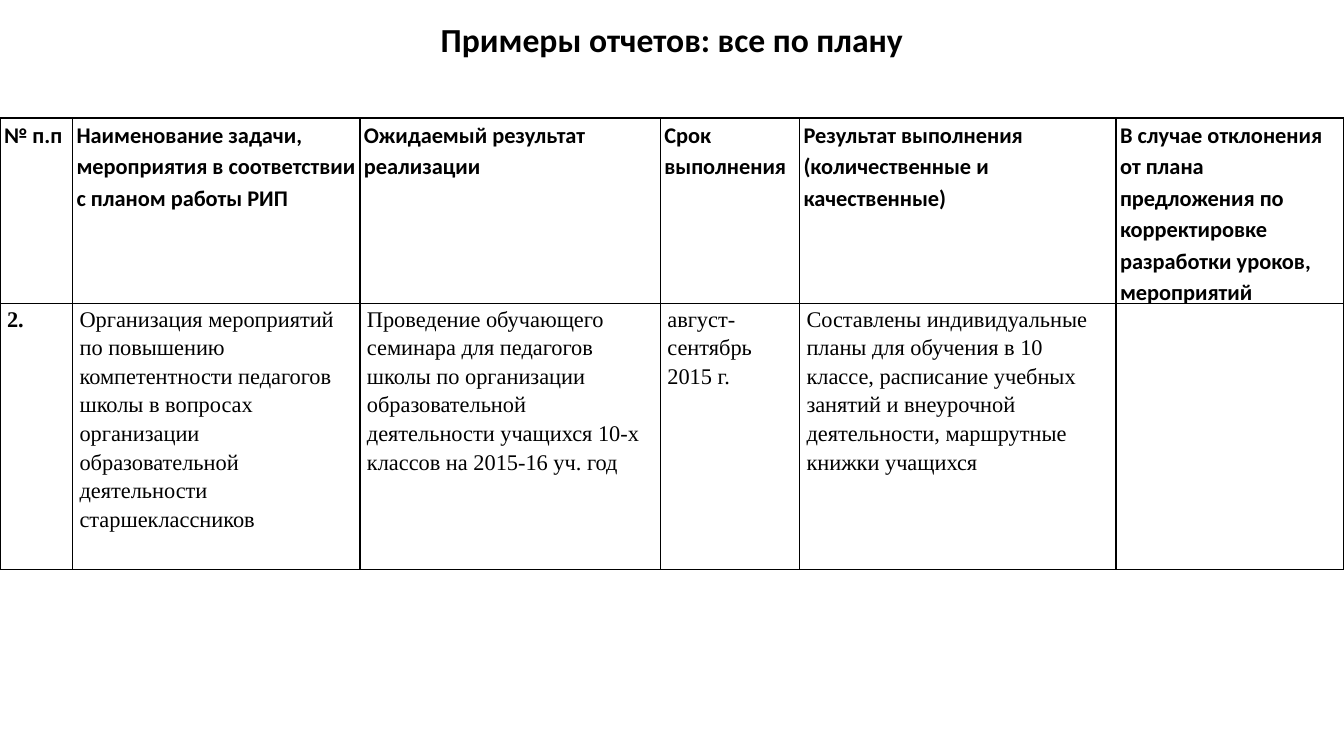
from lxml import etree
from pptx import Presentation
from pptx.dml.color import RGBColor
from pptx.enum.text import MSO_AUTO_SIZE, PP_ALIGN
from pptx.oxml.ns import qn
from pptx.util import Inches, Pt

CENTER = PP_ALIGN.CENTER
FIT_SHAPE = MSO_AUTO_SIZE.SHAPE_TO_FIT_TEXT

COLORS = {"ink": "000000"}
HEAD_FONT = "Calibri"
BODY_FONT = "Times New Roman"

COLUMN_WIDTHS = [0.72, 2.85, 2.98, 1.38, 3.14, 2.26]
ROW_HEIGHTS = [1.84, 2.64]
HEADINGS = [
    "№ п.п",
    "Наименование задачи, мероприятия в соответствии с планом работы РИП",
    "Ожидаемый результат реализации",
    "Срок выполнения",
    "Результат выполнения (количественные и качественные)",
    "В случае отклонения от плана предложения по корректировке "
    "разработки уроков, мероприятий",
]
TASK = [
    "2.",
    "Организация мероприятий по повышению компетентности педагогов школы "
    "в вопросах организации образовательной деятельности старшеклассников",
    "Проведение обучающего семинара для педагогов школы по организации "
    "образовательной деятельности учащихся 10-х классов на 2015-16 уч. год",
    "август-сентябрь 2015 г.",
    "Составлены индивидуальные планы для обучения в 10 классе, расписание "
    "учебных занятий и внеурочной деятельности, маршрутные книжки учащихся",
    "",
]


def set_text(para, text, font_name, size, bold):
    para.text = text
    para.font.name = font_name
    para.font.size = Pt(size)
    para.font.bold = bold
    para.font.color.rgb = RGBColor.from_string(COLORS["ink"])


def add_title(page, text):
    box = page.shapes.add_textbox(0, Inches(0.14), Inches(13.33), Inches(0.5))
    frame = box.text_frame
    frame.word_wrap = True
    frame.auto_size = FIT_SHAPE
    para = frame.paragraphs[0]
    para.alignment = CENTER
    set_text(para, text, HEAD_FONT, 24, True)


def add_borders(cell):
    properties = cell._tc.get_or_add_tcPr()
    # Border lines come before the fill in the cell properties
    for index, side in enumerate(("a:lnL", "a:lnR", "a:lnT", "a:lnB")):
        line = etree.Element(qn(side), w=str(Pt(1)))
        fill = etree.SubElement(line, qn("a:solidFill"))
        etree.SubElement(fill, qn("a:srgbClr"), val=COLORS["ink"])
        properties.insert(index, line)


def fill_cell(cell, text, font_name, bold, side_margin):
    cell.fill.background()
    cell.margin_left = cell.margin_right = Inches(side_margin)
    cell.margin_top = cell.margin_bottom = 0
    para = cell.text_frame.paragraphs[0]
    para.line_spacing = 1.15
    set_text(para, text, font_name, 16, bold)
    add_borders(cell)


def add_report_table(page):
    frame = page.shapes.add_table(
        len(ROW_HEIGHTS), len(COLUMN_WIDTHS), 0, Inches(1.17),
        Inches(sum(COLUMN_WIDTHS)), Inches(sum(ROW_HEIGHTS)))
    table = frame.table
    table.first_row = False
    table.horz_banding = False
    for column, width in zip(table.columns, COLUMN_WIDTHS):
        column.width = Inches(width)
    for row, height in zip(table.rows, ROW_HEIGHTS):
        row.height = Inches(height)
    for index, (heading, entry) in enumerate(zip(HEADINGS, TASK)):
        fill_cell(table.cell(0, index), heading, HEAD_FONT, True, 0.04)
        # Only the task number is bold in the body row
        fill_cell(table.cell(1, index), entry, BODY_FONT, index == 0, 0.07)


def main():
    deck = Presentation()
    deck.slide_width = Inches(13.33)
    deck.slide_height = Inches(7.5)
    page = deck.slides.add_slide(deck.slide_layouts[6])
    add_title(page, "Примеры отчетов: все по плану")
    add_report_table(page)
    deck.save("out.pptx")


if __name__ == "__main__":
    main()
